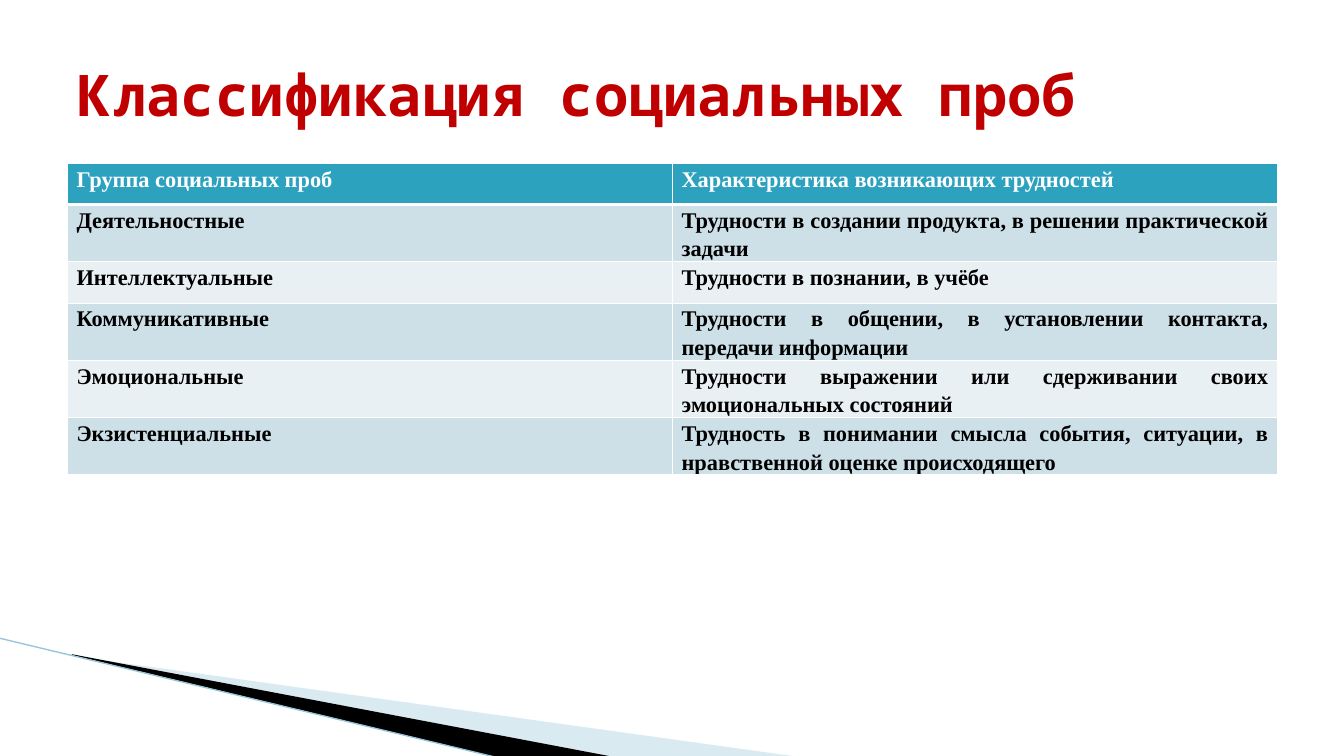
from dataclasses import dataclass

import lxml.etree
import pptx
import pptx.dml.color
import pptx.enum.shapes
import pptx.enum.text
import pptx.oxml.ns
import pptx.util

PX = 9144  # EMU per px, 100 px to the inch
COLORS = {
    "title": "C00000", "header": "2DA2BF", "band_dark": "CDE0E8",
    "band_light": "E8F0F4", "white": "FFFFFF", "black": "000000",
    "wedge": "A0CBDC", "line": "97C5D8",
}
BODY_FONT = "Times New Roman"
TITLE_FONT = "Noto Sans Mono"
TITLE = "Классификация социальных проб"
ROWS = [
    ("Группа социальных проб", "Характеристика возникающих трудностей"),
    ("Деятельностные", "Трудности в создании продукта, в решении практической задачи"),
    ("Интеллектуальные", "Трудности в познании, в учёбе"),
    ("Коммуникативные", "Трудности в общении, в установлении контакта, передачи информации"),
    ("Эмоциональные", "Трудности выражении или сдерживании своих эмоциональных состояний"),
    ("Экзистенциальные", "Трудность в понимании смысла события, ситуации, в нравственной оценке происходящего"),
]
LEFT, COL_W, ROW_H = 67, 600, 41
TABLE_TOP, CELL_INSET = 162, 9


@dataclass
class Wedge:
    points: list[tuple[int, int]]
    color: str
    opacity: int = 100


WEDGES = [
    Wedge([(73, 651), (793, 751), (608, 751), (73, 650)], "wedge", 40),
    Wedge([(71, 649), (609, 751), (496, 752), (72, 650)], "black"),
]


def px(n: int) -> pptx.util.Emu:
    return pptx.util.Emu(n * PX)


def rgb(name: str) -> pptx.dml.color.RGBColor:
    return pptx.dml.color.RGBColor.from_string(COLORS[name])


def sub(parent, tag: str, **attrs: str):
    return lxml.etree.SubElement(parent, pptx.oxml.ns.qn(tag), attrs)


def add_run(p, text: str, font: str, size: int, color: str) -> None:
    r = p.add_run()
    r.text = text
    r.font.name = font
    r.font.size = pptx.util.Pt(size)
    r.font.bold = True
    r.font.color.rgb = rgb(color)


def add_wedge(s, wedge: Wedge) -> None:
    builder = s.shapes.build_freeform(*wedge.points[0], scale=PX)
    builder.add_line_segments(wedge.points[1:], close=True)
    sp = builder.convert_to_shape()
    sp.shadow.inherit = False
    sp.line.fill.background()
    sp.fill.solid()
    sp.fill.fore_color.rgb = rgb(wedge.color)
    if wedge.opacity < 100:
        clr = sp._element.spPr.find(".//" + pptx.oxml.ns.qn("a:srgbClr"))
        sub(clr, "a:alpha", val=str(wedge.opacity * 1000))


def add_borders(cell, bottom_pt: int) -> None:
    tc_pr = cell._tc.get_or_add_tcPr()
    for side, pt in (("L", 1), ("R", 1), ("T", 1), ("B", bottom_pt)):
        ln = sub(tc_pr, f"a:ln{side}", w=str(pptx.util.Pt(pt)))
        sub(sub(ln, "a:solidFill"), "a:srgbClr", val=COLORS["white"])


def fill_cell(cell, text: str, row: int) -> None:
    is_header = row == 0
    band = "band_dark" if row % 2 else "band_light"
    add_borders(cell, 3 if is_header else 1)
    cell.fill.solid()
    cell.fill.fore_color.rgb = rgb("header" if is_header else band)
    cell.margin_left = cell.margin_right = px(CELL_INSET)
    cell.margin_top = cell.margin_bottom = 0
    p = cell.text_frame.paragraphs[0]
    p.alignment = pptx.enum.text.PP_ALIGN.JUSTIFY
    p.line_spacing = 1.15
    add_run(p, text, BODY_FONT, 16, "white" if is_header else "black")


def main() -> None:
    prs = pptx.Presentation()
    prs.slide_width, prs.slide_height = pptx.util.Inches(13.33), px(750)
    s = prs.slides.add_slide(prs.slide_layouts[5])

    # Corner decoration
    for wedge in WEDGES:
        add_wedge(s, wedge)
    line = s.shapes.add_connector(
        pptx.enum.shapes.MSO_CONNECTOR.STRAIGHT, px(-1), px(633), px(495), px(752))
    line.line.color.rgb = rgb("line")
    line.line.width = pptx.util.Pt(0.95)
    sub(line._element.spPr, "a:effectLst")

    # Table
    tbl = s.shapes.add_table(
        len(ROWS), 2, px(LEFT), px(TABLE_TOP), px(2 * COL_W), px(len(ROWS) * ROW_H)).table
    tbl.horz_banding = False
    for i, texts in enumerate(ROWS):
        for j, text in enumerate(texts):
            fill_cell(tbl.cell(i, j), text, i)

    # Title
    title = s.shapes.title
    title.left, title.top, title.width, title.height = px(LEFT), px(30), px(2 * COL_W), px(125)
    tf = title.text_frame
    tf.word_wrap = True
    tf.vertical_anchor = pptx.enum.text.MSO_ANCHOR.MIDDLE
    p = tf.paragraphs[0]
    p.alignment = pptx.enum.text.PP_ALIGN.LEFT
    add_run(p, TITLE, TITLE_FONT, 41, "title")

    prs.save("out.pptx")


if __name__ == "__main__":
    main()
